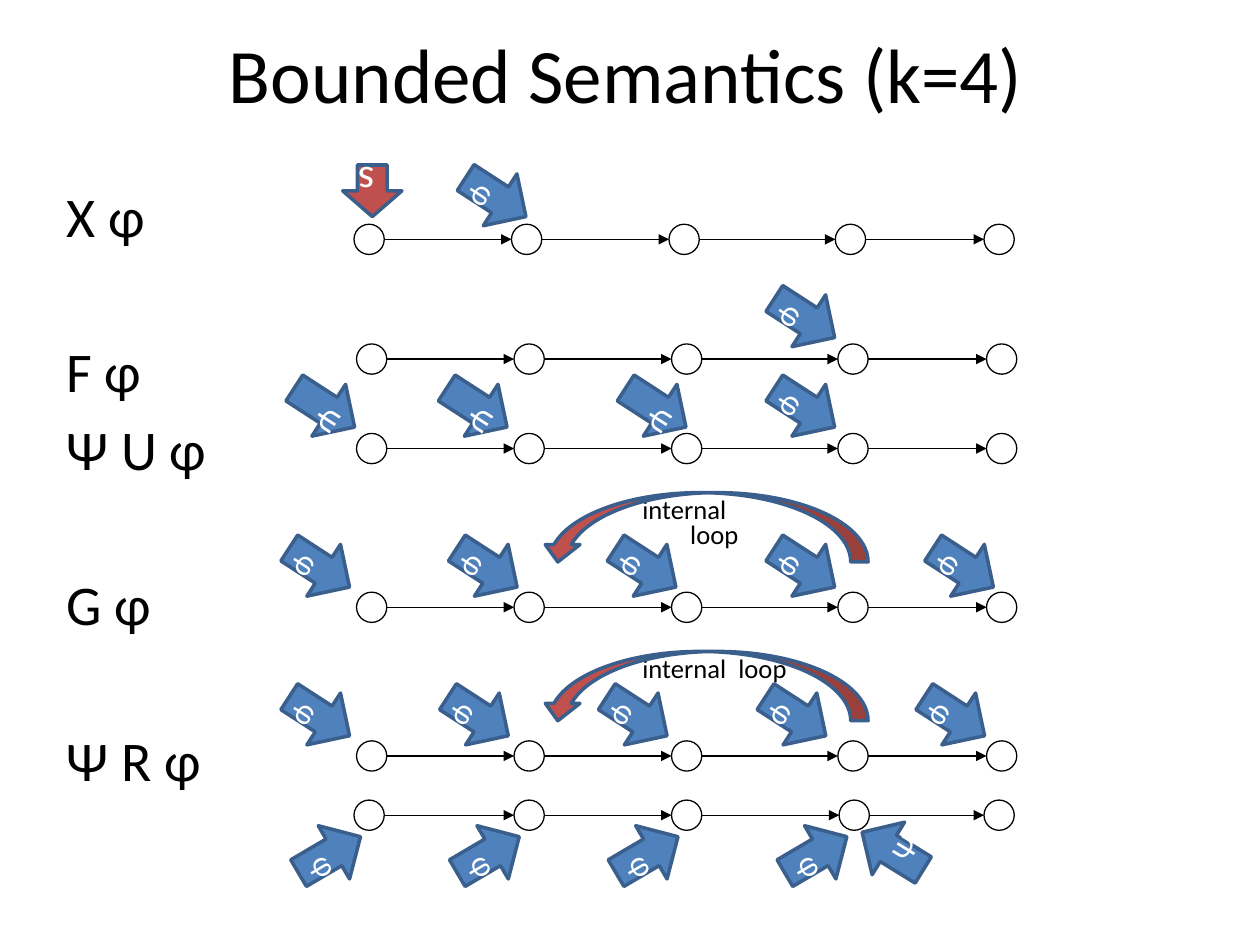
from lxml import etree
from pptx import Presentation
from pptx.dml.color import RGBColor
from pptx.enum.shapes import MSO_CONNECTOR, MSO_SHAPE
from pptx.enum.text import MSO_ANCHOR, PP_ALIGN
from pptx.oxml.ns import qn
from pptx.util import Inches, Pt

CURVE = MSO_CONNECTOR.CURVE
OVAL, UP_ARROW, LOOP_ARROW = MSO_SHAPE.OVAL, MSO_SHAPE.UP_ARROW, MSO_SHAPE.CURVED_DOWN_ARROW
TOP, MIDDLE = MSO_ANCHOR.TOP, MSO_ANCHOR.MIDDLE
LEFT, CENTER = PP_ALIGN.LEFT, PP_ALIGN.CENTER

COLUMNS, ROWS = 100, 75
BLACK, WHITE, BLUE, RED, EDGE = "000000", "FFFFFF", "4F81BD", "C0504D", "3A5F8C"
NODE = 2.4


def color(hex_value):
    return RGBColor.from_string(hex_value)


def set_all(target, values):
    for name, value in values.items():
        setattr(target, name, value)


class Board:
    """Style and current slide; lengths are columns and rows of the grid."""

    font = "Calibri"

    def __init__(self, deck):
        self.column = deck.slide_width / COLUMNS
        self.row = deck.slide_height / ROWS
        self.slide = deck.slides.add_slide(deck.slide_layouts[5])

    def place(self, x, y, width, height):
        return (round(x * self.column), round(y * self.row),
                round(width * self.column), round(height * self.row))

    def add_words(self, paragraph, text, size, ink, **layout):
        run = paragraph.add_run()
        run.text = text
        set_all(run.font, {"name": self.font, "size": Pt(size)})
        run.font.color.rgb = color(ink)
        set_all(paragraph, layout)

    def title(self, text, *area):
        holder = self.slide.shapes.title
        set_all(holder, dict(zip(("left", "top", "width", "height"), self.place(*area))))
        holder.text_frame.vertical_anchor = MIDDLE
        self.add_words(holder.text_frame.paragraphs[0], text, 44, BLACK, alignment=CENTER)

    def text_box(self, lines, area, size, **layout):
        """Each line is its text and the space before it in points."""
        frame = self.slide.shapes.add_textbox(*self.place(*area)).text_frame
        set_all(frame, {"word_wrap": True, "vertical_anchor": TOP})
        for index, (text, space) in enumerate(lines):
            paragraph = frame.add_paragraph() if index else frame.paragraphs[0]
            self.add_words(paragraph, text, size, BLACK, alignment=LEFT,
                           space_before=Pt(space), **layout)
            properties = paragraph._p.get_or_add_pPr()
            properties.set("marL", str(Inches(0.38)))
            properties.set("indent", str(-Inches(0.38)))

    def shape(self, kind, area, fill=None, edge=EDGE, weight=2, flip=None, turn=0):
        shape = self.slide.shapes.add_shape(kind, *self.place(*area))
        shape.shadow.inherit = False
        if fill:
            shape.fill.solid()
            shape.fill.fore_color.rgb = color(fill)
        else:
            shape.fill.background()
        shape.line.color.rgb = color(edge)
        shape.line.width = Pt(weight)
        shape.rotation = turn
        if flip:
            shape._element.spPr.find(qn("a:xfrm")).set(flip, "1")
        return shape

    def node(self, x, y):
        self.shape(OVAL, (x, y, NODE, NODE), edge=BLACK, weight=0.75)

    def step(self, start, end, y):
        x1, y1, x2, y2 = self.place(start, y, end, y)
        link = self.slide.shapes.add_connector(CURVE, x1, y1, x2, y2)
        link.line.color.rgb = color(BLACK)
        link.line.width = Pt(0.75)
        outline = link._element.spPr.find(qn("a:ln"))
        etree.SubElement(outline, qn("a:tailEnd"), type="triangle")
        etree.SubElement(link._element.spPr, qn("a:effectLst"))

    def state_row(self, y, xs):
        for x in xs:
            self.node(x, y)
        for x, following in zip(xs, xs[1:]):
            self.step(x + NODE, following, y + NODE / 2)

    def marker(self, text, x, y, turn=303, width=4.9, height=5.7, fill=BLUE, size=18):
        arrow = self.shape(UP_ARROW, (x, y, width, height), fill, flip="flipV", turn=turn)
        arrow.text_frame.vertical_anchor = MIDDLE
        self.add_words(arrow.text_frame.paragraphs[0], text, size, WHITE, alignment=CENTER)


def main():
    deck = Presentation()
    deck.slide_width, deck.slide_height = Inches(10), Inches(7.5)
    board = Board(deck)
    board.title("Bounded Semantics (k=4)", 4.7, 0, 90, 11.5)

    # Paths of five states
    states = [28.3, 40.8, 53.3, 66.5, 78.3]
    board.state_row(17.8, [x - 0.2 for x in states])
    for y in (27.3, 34.4, 47, 58.8):
        board.state_row(y, states)
    board.state_row(63.5, [28.1, 40.8, 53.3, 66.6, 78.1])

    # Formulas, set apart by the paths they describe
    near, far = 5.7, 50.5
    board.text_box([("X φ", near), ("F φ", far), ("Ψ U φ", near), ("G φ", far), ("Ψ R φ", far)],
                   (4.3, 13.9, 20.5, 55.1), 32)

    # Markers of the states where a formula holds: text, row, turn, columns
    markers = [
        ("Ψ ", 29.5, 303, [23.3, 35.4, 49.6]),
        ("φ", 12.8, 303, [36.9]),
        ("φ", 22.4, 303, [61.4]),
        ("φ", 29.5, 303, [61.4]),
        ("φ", 42.2, 303, [22.9, 36.2, 48.8, 61.4, 74]),
        ("φ", 54, 303, [22.9 + 12.6 * i for i in range(5)]),
        ("φ", 65, 239.5, [23.7, 36.3, 48.9, 62.3]),
        ("Ψ", 64.7, 121.7, [68.4]),
    ]
    for text, y, turn, xs in markers:
        for x in xs:
            board.marker(text, x, y, turn)
    board.marker("s", 27.2, 13.1, 0, 4.7, 4.1, RED, 24)

    # Internal loops
    loops = [(51.7, 14.2), (39.1, 13.4)]
    for y, width in loops:
        board.text_box([("internal  loop", 3)], (50, y, width, 3.1), 15.2, line_spacing=0.8)
    for y, _ in loops:
        board.shape(LOOP_ARROW, (42.9, y, 26, 5.5), RED, flip="flipH")

    deck.save("out.pptx")


if __name__ == "__main__":
    main()
